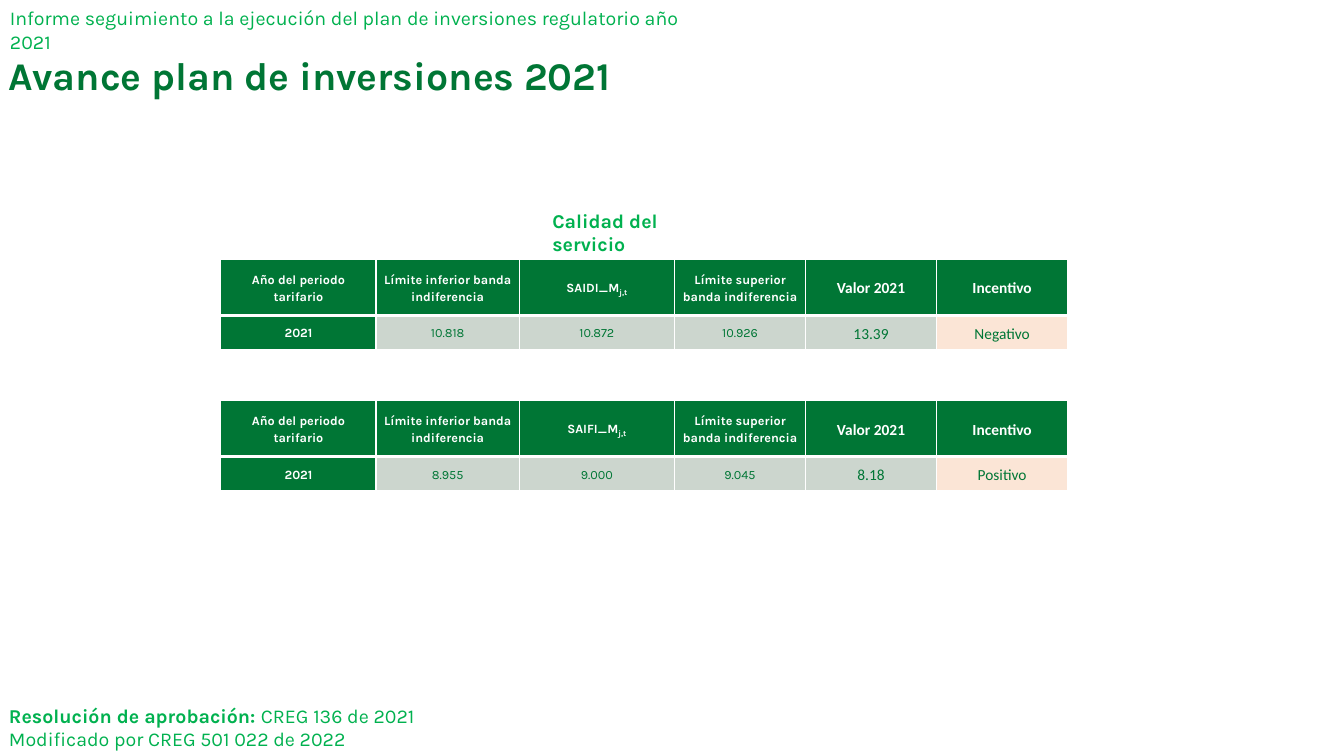
import dataclasses

import pptx
import pptx.dml.color
import pptx.enum.text
import pptx.oxml
import pptx.oxml.ns
import pptx.util
from pptx.util import Inches


@dataclasses.dataclass(frozen=True)
class Theme:
    dark_green: str = "007635"
    green: str = "00B14F"
    white: str = "FFFFFF"
    grey: str = "CCD6CE"
    peach: str = "FBE5D6"
    font: str = "Karla"
    value_font: str = "Calibri"
    title_size: int = 28
    text_size: int = 14
    cell_size: int = 9
    value_size: int = 11
    subscript_size: int = 10


class SlideBuilder:
    def __init__(self, slide, theme):
        self.slide = slide
        self.theme = theme

    def style(self, font, size, color, bold=False, name=None):
        font.name = name or self.theme.font
        font.size = pptx.util.Pt(size)
        font.bold = bold
        font.color.rgb = pptx.dml.color.RGBColor.from_string(color)

    def text(self, left, top, width, height, paragraphs, size, color, spacing=1.0):
        shape = self.slide.shapes.add_textbox(
            Inches(left), Inches(top), Inches(width), Inches(height))
        frame = shape.text_frame
        frame.word_wrap = True
        for index, runs in enumerate(paragraphs):
            paragraph = frame.paragraphs[0] if index == 0 else frame.add_paragraph()
            paragraph.line_spacing = spacing
            for content, bold in runs:
                run = paragraph.add_run()
                run.text = content
                self.style(run.font, size, color, bold)

    def borders(self, cell, widths):
        properties = cell._tc.get_or_add_tcPr()
        for position, (side, width) in enumerate(zip("LRTB", widths)):
            border = pptx.oxml.parse_xml(
                f'<a:ln{side} {pptx.oxml.ns.nsdecls("a")} w="{pptx.util.Pt(width)}">'
                f'<a:solidFill><a:srgbClr val="{self.theme.white}"/></a:solidFill>'
                f'</a:ln{side}>')
            properties.insert(position, border)

    def cell(self, cell, content, fill, color, bold, is_value, subscript=""):
        theme = self.theme
        cell.fill.solid()
        cell.fill.fore_color.rgb = pptx.dml.color.RGBColor.from_string(fill)
        cell.vertical_anchor = pptx.enum.text.MSO_ANCHOR.MIDDLE
        cell.margin_left = cell.margin_right = Inches(0.07)
        cell.margin_top = cell.margin_bottom = 0
        paragraph = cell.text_frame.paragraphs[0]
        paragraph.alignment = pptx.enum.text.PP_ALIGN.CENTER
        paragraph.line_spacing = 1.15
        size = theme.value_size if is_value else theme.cell_size
        name = theme.value_font if is_value else theme.font
        self.style(paragraph.font, size, color, bold, name)
        paragraph.add_run().text = content
        if subscript:
            run = paragraph.add_run()
            run.text = subscript
            run.font.size = pptx.util.Pt(theme.subscript_size)
            run._r.get_or_add_rPr().set("baseline", "-25000")

    def indicator_table(self, top, indicator, values):
        theme = self.theme
        widths = [1.54, 1.42, 1.54, 1.3, 1.3, 1.3]
        heights = [0.56, 0.34]
        headers = ["Año del periodo tarifario", "Límite inferior banda indiferencia",
                   indicator, "Límite superior banda indiferencia",
                   "Valor 2021", "Incentivo"]
        table = self.slide.shapes.add_table(
            len(heights), len(widths), Inches(2.19), Inches(top),
            Inches(sum(widths)), Inches(sum(heights))).table
        for row, height in zip(table.rows, heights):
            row.height = Inches(height)
        value_fills = [theme.dark_green] + [theme.grey] * 4 + [theme.peach]
        for index, width in enumerate(widths):
            table.columns[index].width = Inches(width)
            is_value = index >= 4
            header, value = table.cell(0, index), table.cell(1, index)
            self.cell(header, headers[index], theme.dark_green, theme.white, True,
                      is_value, "j,t" if index == 2 else "")
            self.cell(value, values[index], value_fills[index],
                      theme.dark_green if index else theme.white, index == 0, is_value)
            self.borders(header, (1, 1, 1, 3))
            self.borders(value, (1, 1, 3, 1))


def main():
    presentation = pptx.Presentation()
    presentation.slide_width = Inches(13.33)
    presentation.slide_height = Inches(7.5)
    slide = presentation.slides.add_slide(presentation.slide_layouts[6])
    theme = Theme()
    builder = SlideBuilder(slide, theme)

    builder.text(-0.01, 0.51, 8.48, 0.71, [[("Avance plan de inversiones 2021", True)]],
                 theme.title_size, theme.dark_green, 0.9)
    builder.text(0, 0.01, 7.27, 0.34,
                 [[("Informe seguimiento a la ejecución del plan de inversiones "
                    "regulatorio año 2021", False)]],
                 theme.text_size, theme.green)
    builder.indicator_table(
        2.57, "SAIDI_M", ["2021", "10.818", "10.872", "10.926", "13.39", "Negativo"])
    builder.indicator_table(
        3.97, "SAIFI_M", ["2021", "8.955", "9.000", "9.045", "8.18", "Positivo"])
    builder.text(5.38, 2.02, 2, 0.34, [[("Calidad del servicio", True)]],
                 theme.text_size, theme.green)
    builder.text(-0.01, 6.93, 4.27, 0.57,
                 [[("Resolución de aprobación: ", True), ("CREG 136 de 2021", False)],
                  [("Modificado por CREG 501 022 de 2022", False)]],
                 theme.text_size, theme.green)
    presentation.save("out.pptx")


if __name__ == "__main__":
    main()
